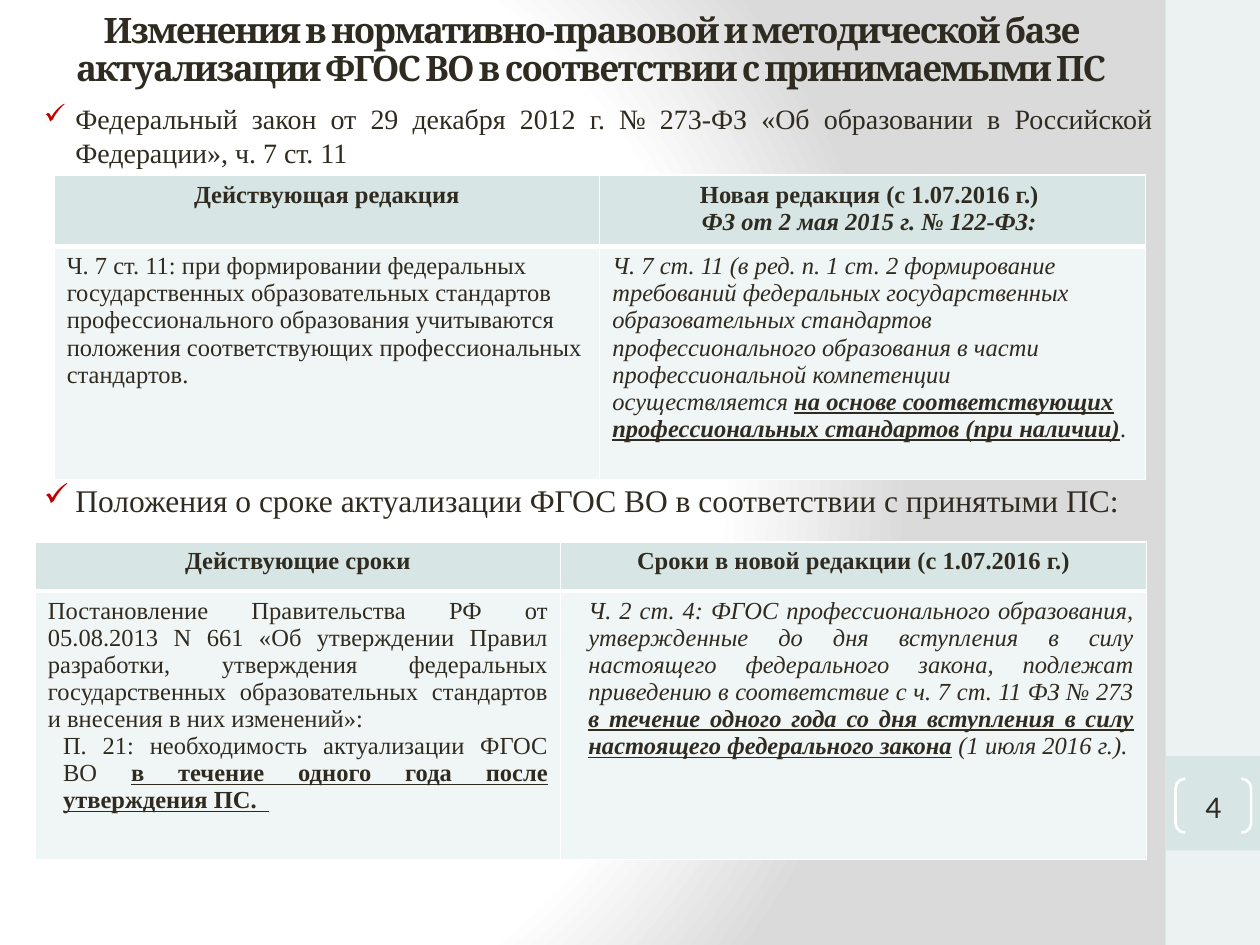
from dataclasses import dataclass
from lxml import etree
from pptx import Presentation
from pptx.dml.color import RGBColor
from pptx.enum.shapes import MSO_SHAPE
from pptx.enum.text import MSO_ANCHOR, PP_ALIGN
from pptx.oxml import parse_xml
from pptx.util import Inches, Pt

RECT, BRACKETS = MSO_SHAPE.RECTANGLE, MSO_SHAPE.DOUBLE_BRACKET
MIDDLE = MSO_ANCHOR.MIDDLE
LEFT, CENTER, JUSTIFY = PP_ALIGN.LEFT, PP_ALIGN.CENTER, PP_ALIGN.JUSTIFY
NS = "http://schemas.openxmlformats.org/drawingml/2006/main"


@dataclass(frozen=True)
class Theme:
    text: str = "2F2B20"
    white: str = "FFFFFF"
    shade: str = "DADADA"
    side: str = "EBF2F1"
    head: str = "D7E5E4"
    body: str = "F0F5F5"
    check: str = "C00000"
    title_font: str = "Cambria"
    body_font: str = "Times New Roman"
    number_font: str = "Calibri"
    title_size: int = 20
    law_size: int = 16
    large_size: int = 18
    cell_size: int = 14


T = Theme()


def write(p, runs, size, font, align):
    p.alignment = align
    p.font.size = Pt(size)
    p.font.name = font
    p.font.color.rgb = RGBColor.from_string(T.text)
    for text, style in runs:
        r = p.add_run()
        r.text = text
        r.font.size = Pt(size)
        r.font.name = font
        r.font.color.rgb = RGBColor.from_string(T.text)
        r.font.bold = "b" in style
        r.font.italic = "i" in style
        r.font.underline = "u" in style


def border(cell, side, width):
    cell._tc.get_or_add_tcPr().append(parse_xml(
        f'<a:ln{side} xmlns:a="{NS}" w="{Pt(width)}"><a:solidFill>'
        f'<a:srgbClr val="{T.white}"/></a:solidFill></a:ln{side}>'))


prs = Presentation()
prs.slide_width, prs.slide_height = Inches(10), Inches(7.5)
s = prs.slides.add_slide(prs.slide_layouts[6])

fill = s.background.fill
fill.gradient()
grad = s.background._cSld.find(f".//{{{NS}}}gradFill")
for child in list(grad):
    grad.remove(child)
stops = etree.SubElement(grad, f"{{{NS}}}gsLst")
for pos, color in ((0, T.white), (75, T.white), (100, T.shade)):
    stop = etree.SubElement(stops, f"{{{NS}}}gs", pos=str(pos * 1000))
    etree.SubElement(stop, f"{{{NS}}}srgbClr", val=color)
circle = etree.SubElement(grad, f"{{{NS}}}path", {"path": "circle"})
etree.SubElement(circle, f"{{{NS}}}fillToRect", l="20000", t="50000", r="100000", b="50000")

for top, height, color in ((0, 7.5, T.side), (6, 0.75, T.head)):
    sp = s.shapes.add_shape(RECT, Inches(9.25), Inches(top), Inches(0.75), Inches(height))
    sp.shadow.inherit = False
    sp.fill.solid()
    sp.fill.fore_color.rgb = RGBColor.from_string(color)
    sp.line.fill.background()

title = s.shapes.add_textbox(Inches(0.2), Inches(0), Inches(8.98), Inches(0.81))
tf = title.text_frame
tf.word_wrap = True
tf.vertical_anchor = MIDDLE
p = tf.paragraphs[0]
write(p, [("Изменения в нормативно-правовой и методической базе актуализации "
           "ФГОС ВО в соответствии с принимаемыми ПС", "b")],
      T.title_size, T.title_font, CENTER)
p.line_spacing = 0.9
p.runs[0].font._element.set("spc", "-100")

points = (
    (0.76, 0.62, T.law_size, "Федеральный закон от 29 декабря 2012 г. № 273-ФЗ "
     "«Об образовании в Российской Федерации», ч. 7 ст. 11"),
    (3.77, 0.4, T.large_size, "Положения о сроке актуализации ФГОС ВО "
     "в соответствии с принятыми ПС:"),
)
for top, height, size, text in points:
    sp = s.shapes.add_textbox(Inches(0.12), Inches(top), Inches(9.13), Inches(height))
    tf = sp.text_frame
    tf.word_wrap = True
    p = tf.paragraphs[0]
    write(p, [(text, "")], size, T.body_font, JUSTIFY)
    pPr = p._p.get_or_add_pPr()
    pPr.set("marL", str(Inches(0.38)))
    pPr.set("indent", str(Inches(-0.25)))
    bullet = parse_xml(f'<a:buClr xmlns:a="{NS}"><a:srgbClr val="{T.check}"/></a:buClr>')
    pPr.insert(0, bullet)
    bullet.addnext(parse_xml(f'<a:buChar xmlns:a="{NS}" char="✓"/>'))

sp = s.shapes.add_shape(BRACKETS, Inches(9.33), Inches(6.18), Inches(0.6), Inches(0.43))
sp.adjustments[0] = 0.18
sp.shadow.inherit = False
sp.fill.background()
sp.line.color.rgb = RGBColor.from_string(T.white)
sp.line.width = Pt(1.5)
tf = sp.text_frame
tf.margin_left = tf.margin_right = tf.margin_top = tf.margin_bottom = 0
tf.vertical_anchor = MIDDLE
write(tf.paragraphs[0], [("4", "")], T.large_size, T.number_font, CENTER)

edition_rows = [
    [[(CENTER, 0, [("Действующая редакция", "b")])],
     [(CENTER, 0, [("Новая редакция (с 1.07.2016 г.) ", "b")]),
      (CENTER, 0, [("ФЗ от 2 мая 2015 г. № 122-ФЗ: ", "bi")])]],
    [[(LEFT, 0, [("Ч. 7 ст. 11: при формировании федеральных государственных "
                  "образовательных стандартов профессионального образования учитываются "
                  "положения соответствующих профессиональных стандартов.", "")])],
     [(LEFT, 0, [("Ч. 7 ст. 11 (в ред. п. 1 ст. 2 формирование требований федеральных "
                  "государственных образовательных стандартов профессионального образования "
                  "в части профессиональной компетенции осуществляется ", "i"),
                 ("на основе соответствующих профессиональных стандартов (при наличии)", "biu"),
                 (".", "i")])]],
]
deadline_rows = [
    [[(CENTER, 0, [("Действующие сроки", "b")])],
     [(CENTER, 0, [("Сроки в новой редакции (с 1.07.2016 г.)", "b")])]],
    [[(JUSTIFY, 0, [("Постановление Правительства РФ от 05.08.2013 N 661 «Об утверждении "
                     "Правил разработки, утверждения федеральных государственных "
                     "образовательных стандартов и внесения в них изменений»:", "")]),
      (JUSTIFY, 0.12, [("П. 21: необходимость актуализации ФГОС ВО ", ""),
                       ("в течение одного года после утверждения ПС.  ", "bu")])],
     [(JUSTIFY, 0.12, [("Ч. 2 ст. 4: ФГОС профессионального образования, утвержденные до дня "
                        "вступления в силу настоящего федерального закона, подлежат "
                        "приведению в соответствие с ч. 7 ст. 11 ФЗ № 273 ", "i"),
                       ("в течение одного года со дня вступления в силу настоящего "
                        "федерального закона", "biu"),
                       (" (1 июля 2016 г.).  ", "i")])]],
]
tables = (
    (0.43, 1.39, (4.33, 4.33), (0.52, 1.85), edition_rows),
    (0.28, 4.3, (4.17, 4.65), (0.39, 2.13), deadline_rows),
)
for left, top, widths, heights, rows in tables:
    table = s.shapes.add_table(2, 2, Inches(left), Inches(top),
                               Inches(sum(widths)), Inches(sum(heights))).table
    for i in range(2):
        table.columns[i].width = Inches(widths[i])
        table.rows[i].height = Inches(heights[i])
    for i, row in enumerate(rows):
        for j, paragraphs in enumerate(row):
            cell = table.cell(i, j)
            for side, width in zip("LRTB", (1, 1, 1 if i == 0 else 3, 3 if i == 0 else 1)):
                border(cell, side, width)
            cell.fill.solid()
            cell.fill.fore_color.rgb = RGBColor.from_string(T.head if i == 0 else T.body)
            tf = cell.text_frame
            for n, (align, indent, runs) in enumerate(paragraphs):
                p = tf.add_paragraph() if n else tf.paragraphs[0]
                write(p, runs, T.cell_size, T.body_font, align)
                p._p.get_or_add_pPr().set("marL", str(Inches(indent)))

prs.save("out.pptx")
